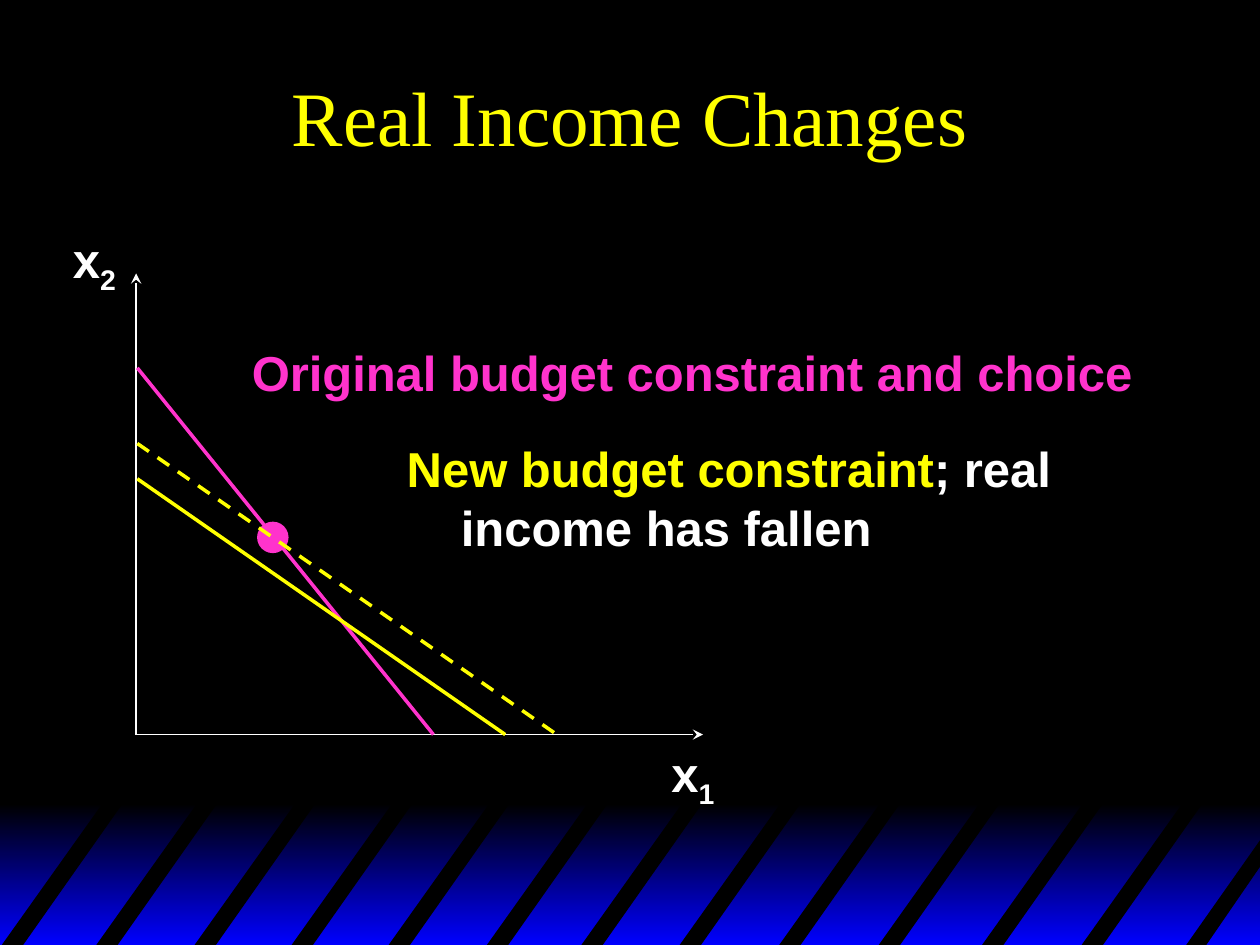
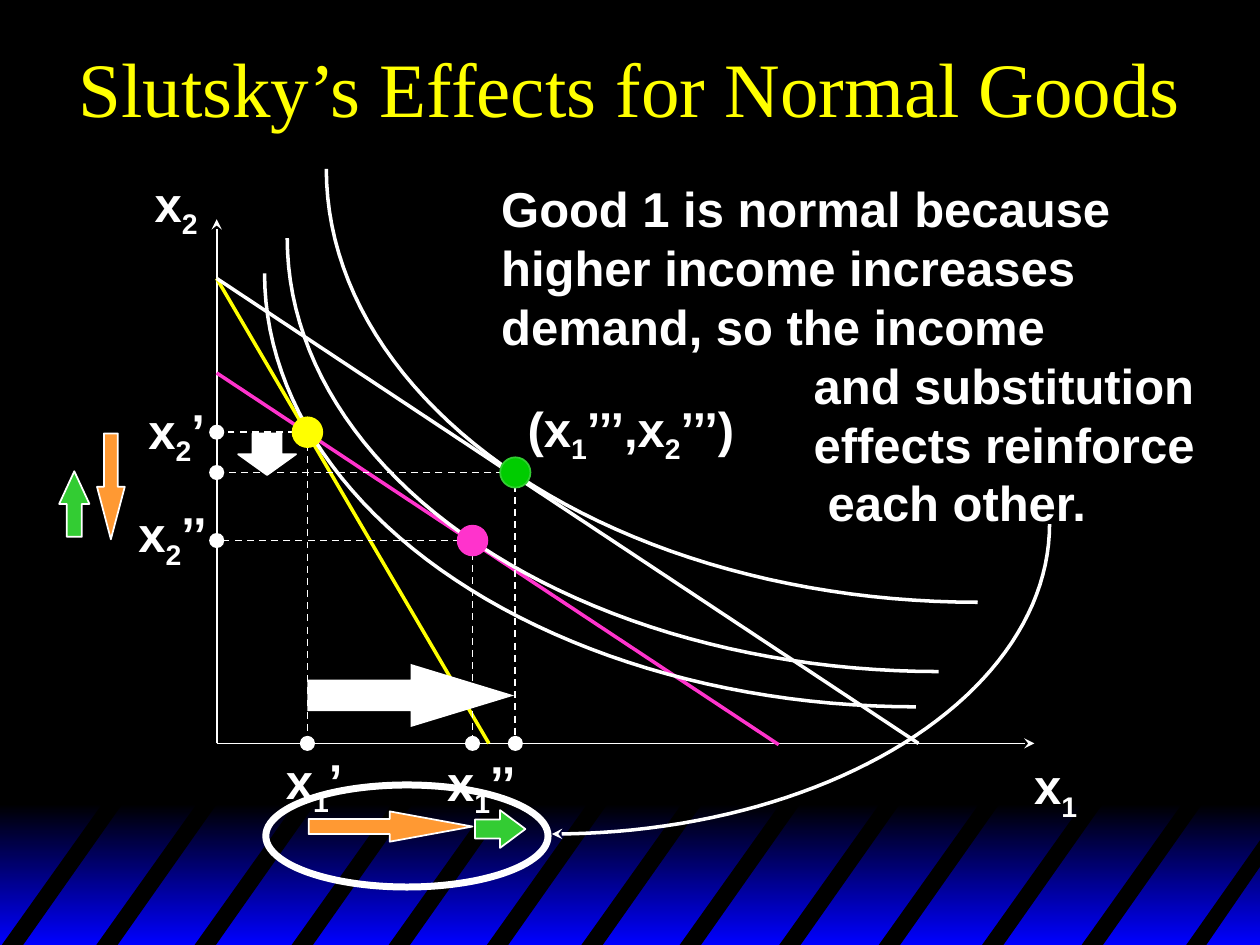
import math

import pptx
import pptx.dml.color
import pptx.enum.dml
import pptx.enum.shapes
import pptx.enum.text
import pptx.oxml.ns
import pptx.util
from lxml import etree

Inches = pptx.util.Inches
Pt = pptx.util.Pt
RGBColor = pptx.dml.color.RGBColor
KIND = pptx.enum.shapes.MSO_SHAPE

BLACK = RGBColor(0x00, 0x00, 0x00)
BLUE = RGBColor(0x00, 0x00, 0xFF)
WHITE = RGBColor(0xFF, 0xFF, 0xFF)
YELLOW = RGBColor(0xFF, 0xFF, 0x00)
PINK = RGBColor(0xFF, 0x33, 0xCC)
ORANGE = RGBColor(0xFF, 0x99, 0x33)
GREEN = RGBColor(0x33, 0xCC, 0x33)
DARK_GREEN = RGBColor(0x00, 0xCC, 0x00)

TITLE_FONT, TITLE_SIZE = "Times New Roman", Pt(44)
LABEL_FONT, LABEL_SIZE = "Arial", Pt(28)


def add_line(slide, start, end, colour=WHITE, width=1, dashed=False, arrow=False):
    line = slide.shapes.add_connector(
        pptx.enum.shapes.MSO_CONNECTOR.STRAIGHT, *map(Inches, start + end))
    line.line.color.rgb = colour
    line.line.width = Pt(width)
    if dashed:
        line.line.dash_style = pptx.enum.dml.MSO_LINE.DASH
    if arrow:
        etree.SubElement(line.line._get_or_add_ln(),
                         pptx.oxml.ns.qn("a:tailEnd"), type="stealth")
    etree.SubElement(line._element.spPr, pptx.oxml.ns.qn("a:effectLst"))


def add_figure(slide, kind, box, fill=None, outline=None, width=1, head=None):
    figure = slide.shapes.add_shape(kind, *map(Inches, box))
    figure.shadow.inherit = False
    if fill is None:
        figure.fill.background()
    else:
        figure.fill.solid()
        figure.fill.fore_color.rgb = fill
    if outline is None:
        figure.line.fill.background()
    else:
        figure.line.color.rgb = outline
        figure.line.width = Pt(width)
    if head is not None:
        figure.adjustments[1] = head
    return figure


prs = pptx.Presentation()
prs.slide_width = Inches(10)
prs.slide_height = Inches(7.5)
prs.slide_master.background.fill.solid()
prs.slide_master.background.fill.fore_color.rgb = BLACK

income, slutsky = [prs.slides.add_slide(prs.slide_layouts[6]) for _ in range(2)]

# Striped band and title on both slides
STRIPE_LEFTS = [0, 0.75, 1.53, 2.3, 3.07, 3.85, 4.6, 5.38, 6.17, 6.96, 7.78, 8.57]
stripes = [[(left, 7.52), (left + 0.84, 6.34), (left + 1, 6.34), (left + 0.17, 7.52)]
           for left in STRIPE_LEFTS]
stripes.append([(9.4, 7.52), (10.02, 6.64), (10.02, 6.85), (9.56, 7.52)])

for slide, title, top in [(income, "Real Income Changes", 0.25),
                          (slutsky, "Slutsky’s Effects for Normal Goods", 0.02)]:
    band = add_figure(slide, KIND.RECTANGLE, (0, 6.38, 10.02, 1.12), BLACK)
    band.fill.gradient()
    band.fill.gradient_angle = 270
    for stop, colour, position in zip(band.fill.gradient_stops, (BLACK, BLUE), (0, 1)):
        stop.color.rgb = colour
        stop.position = position

    for corners in stripes:
        points = [(Inches(x), Inches(y)) for x, y in corners]
        builder = slide.shapes.build_freeform(*points[0])
        builder.add_line_segments(points[1:])
        stripe = builder.convert_to_shape()
        stripe.shadow.inherit = False
        stripe.fill.solid()
        stripe.fill.fore_color.rgb = BLACK
        stripe.line.fill.background()

    heading = slide.shapes.add_textbox(Inches(0), Inches(top), Inches(10), Inches(1.33))
    heading.text_frame.word_wrap = True
    heading.text_frame.vertical_anchor = pptx.enum.text.MSO_ANCHOR.MIDDLE
    paragraph = heading.text_frame.paragraphs[0]
    paragraph.text = title
    paragraph.alignment = pptx.enum.text.PP_ALIGN.CENTER
    paragraph.font.name = TITLE_FONT
    paragraph.font.size = TITLE_SIZE
    paragraph.font.color.rgb = YELLOW

# Slide 1: axes, choice and budget constraints
add_line(income, (1.08, 5.83), (1.08, 2.17), arrow=True)
add_line(income, (1.08, 5.83), (5.58, 5.83), arrow=True)
add_line(income, (1.09, 2.92), (3.44, 5.83), PINK, 2)
add_figure(income, KIND.OVAL, (2.04, 4.14, 0.25, 0.25), PINK)
add_line(income, (1.09, 3.8), (4.01, 5.83), YELLOW, 2)
add_line(income, (1.09, 3.52), (4.42, 5.83), YELLOW, 2, dashed=True)

# Slide 2: axes and budget constraints
AXIS_X, AXIS_Y = 1.72, 5.9
add_line(slutsky, (AXIS_X, AXIS_Y), (AXIS_X, 1.74), arrow=True)
add_line(slutsky, (AXIS_X, AXIS_Y), (8.21, AXIS_Y), arrow=True)
add_line(slutsky, (AXIS_X, 2.21), (3.88, AXIS_Y), YELLOW, 2)
add_line(slutsky, (AXIS_X, 2.21), (7.29, AXIS_Y), WHITE, 2)
add_line(slutsky, (AXIS_X, 2.96), (6.18, 5.91), PINK, 2)

# Slide 2: indifference curves and pointer, quarter ellipses about a centre
CURVE_STEPS = 48
for centre_x, centre_y, radius_x, radius_y, first_angle, arrow in [
        (7.27, 2.17, 5.17, 3.44, 90, False),
        (7.45, 1.89, 5.17, 3.44, 90, False),
        (7.76, 1.34, 5.17, 3.44, 90, False),
        (8.33 - 3.95, 4.16, 3.95, 2.46, 0, True)]:
    angles = [math.radians(first_angle + 90 * step / CURVE_STEPS)
              for step in range(CURVE_STEPS + 1)]
    points = [(Inches(centre_x + radius_x * math.cos(angle)),
               Inches(centre_y + radius_y * math.sin(angle))) for angle in angles]
    builder = slutsky.shapes.build_freeform(*points[0])
    builder.add_line_segments(points[1:], close=False)
    curve = builder.convert_to_shape()
    curve.shadow.inherit = False
    curve.fill.background()
    curve.line.color.rgb = WHITE
    curve.line.width = Pt(2)
    if arrow:
        etree.SubElement(curve.line._get_or_add_ln(),
                         pptx.oxml.ns.qn("a:tailEnd"), type="stealth")

# Slide 2: bundles with dashed guides and marks on the axes
for x, y, size, fill, outline in [(2.44, 3.43, 0.25, YELLOW, None),
                                  (3.75, 4.29, 0.25, PINK, None),
                                  (4.09, 3.75, 0.24, DARK_GREEN, GREEN)]:
    add_line(slutsky, (x, y), (x, AXIS_Y), dashed=True)
    add_line(slutsky, (x, y), (AXIS_X, y), dashed=True)
    for mark_x, mark_y in [(AXIS_X, y), (x, AXIS_Y)]:
        add_figure(slutsky, KIND.OVAL, (mark_x - 0.06, mark_y - 0.06, 0.12, 0.12), WHITE)
    add_figure(slutsky, KIND.OVAL, (x - size / 2, y - size / 2, size, size), fill, outline)

# Slide 2: effect arrows and the ring around the reinforcing pair
for kind, box, fill, outline, head in [
        (KIND.DOWN_ARROW, (1.89, 3.44, 0.46, 0.33), WHITE, WHITE, 0.5),
        (KIND.RIGHT_ARROW, (2.44, 5.27, 1.64, 0.5), WHITE, None, 1.64),
        (KIND.DOWN_ARROW, (0.77, 3.44, 0.22, 0.84), ORANGE, WHITE, 1.89),
        (KIND.RIGHT_ARROW, (2.45, 6.44, 1.3, 0.24), ORANGE, WHITE, 2.73),
        (KIND.RIGHT_ARROW, (3.77, 6.43, 0.4, 0.3), GREEN, WHITE, 0.67),
        (KIND.UP_ARROW, (0.47, 3.74, 0.24, 0.52), GREEN, WHITE, 1.08)]:
    add_figure(slutsky, kind, box, fill, outline, head=head)
add_figure(slutsky, KIND.OVAL, (2.11, 6.23, 2.24, 0.81), outline=WHITE, width=4)

# Labels: lines are (indent, text); "_" encloses subscripts, "|" starts a white part
for slide, box, colour, lines in [
        (income, (5.23, 5.85, 0.57, 0.57), WHITE, [(0, "x_1_")]),
        (income, (0.48, 1.77, 0.57, 0.57), WHITE, [(0, "x_2_")]),
        (income, (1.9, 2.67, 7.2, 0.57), PINK,
         [(0, "Original budget constraint and choice")]),
        (income, (3.13, 3.43, 5.4, 1.03), YELLOW,
         [(0, "New budget constraint|; real"), (0.43, "|income has fallen")]),
        (slutsky, (1.13, 1.33, 0.57, 0.57), WHITE, [(0, "x_2_")]),
        (slutsky, (8.11, 5.95, 0.57, 0.57), WHITE, [(0, "x_1_")]),
        (slutsky, (1.08, 3.13, 0.67, 0.57), WHITE, [(0, "x_2_’")]),
        (slutsky, (1, 3.95, 0.78, 0.57), WHITE, [(0, "x_2_’’")]),
        (slutsky, (2.17, 5.91, 0.67, 0.57), WHITE, [(0, "x_1_’")]),
        (slutsky, (3.45, 5.92, 0.78, 0.57), WHITE, [(0, "x_1_’’")]),
        (slutsky, (4.09, 3.11, 1.94, 0.57), WHITE, [(0, "(x_1_’’’,x_2_’’’)")]),
        (slutsky, (3.88, 1.37, 5.8, 2.9), WHITE,
         [(0, "Good 1 is normal because"), (0, "higher income increases"),
          (0, "demand, so the income"), (2.48, "and substitution"),
          (2.48, "effects reinforce"), (2.59, "each other.")])]:
    label = slide.shapes.add_textbox(*map(Inches, box))
    frame = label.text_frame
    frame.word_wrap = len(lines) > 1
    for row, (indent, text) in enumerate(lines):
        paragraph = frame.add_paragraph() if row else frame.paragraphs[0]
        paragraph.font.name = LABEL_FONT
        paragraph.font.size = LABEL_SIZE
        paragraph.font.bold = True
        paragraph.font.color.rgb = colour
        if indent:
            paragraph._p.get_or_add_pPr().set("marL", str(Inches(indent)))
        for part_number, part in enumerate(text.split("|")):
            for piece_number, piece in enumerate(part.split("_")):
                if not piece:
                    continue
                run = paragraph.add_run()
                run.text = piece
                if part_number:
                    run.font.color.rgb = WHITE
                if piece_number % 2:
                    run._r.get_or_add_rPr().set("baseline", "-25000")

prs.save("out.pptx")
